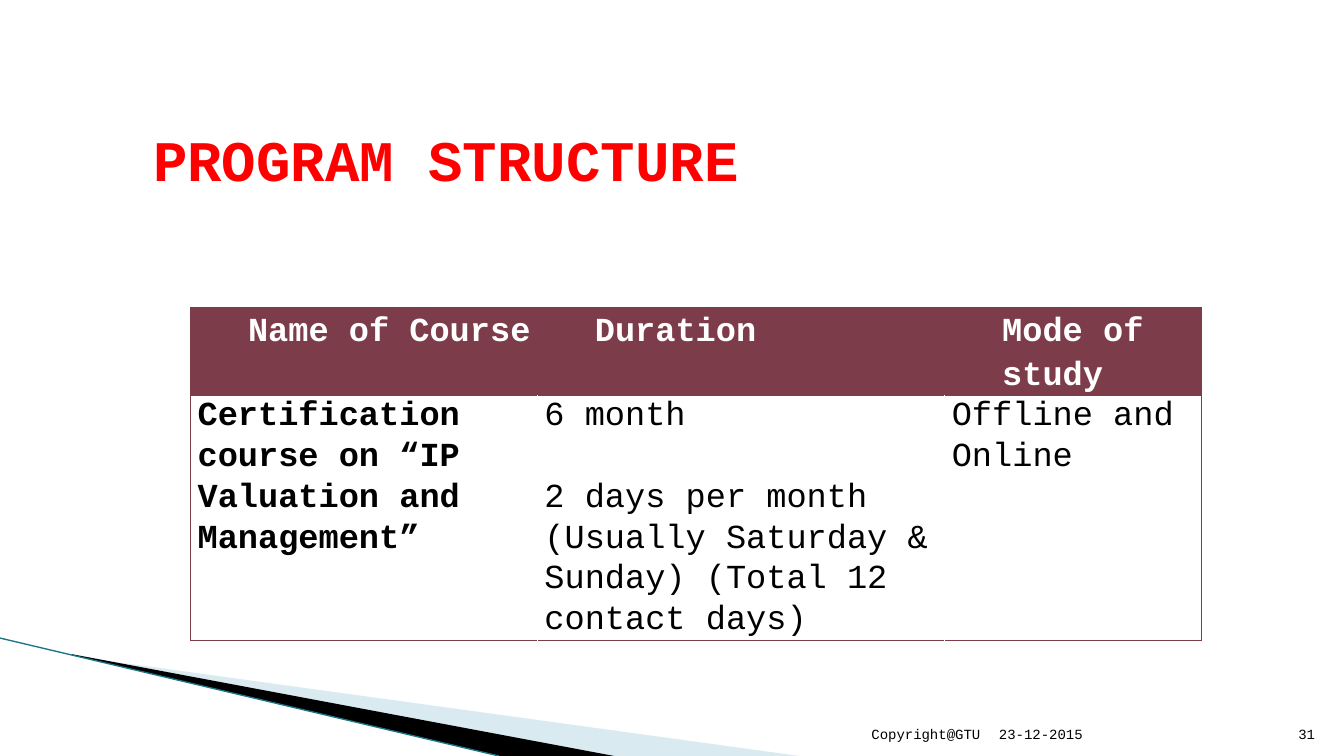
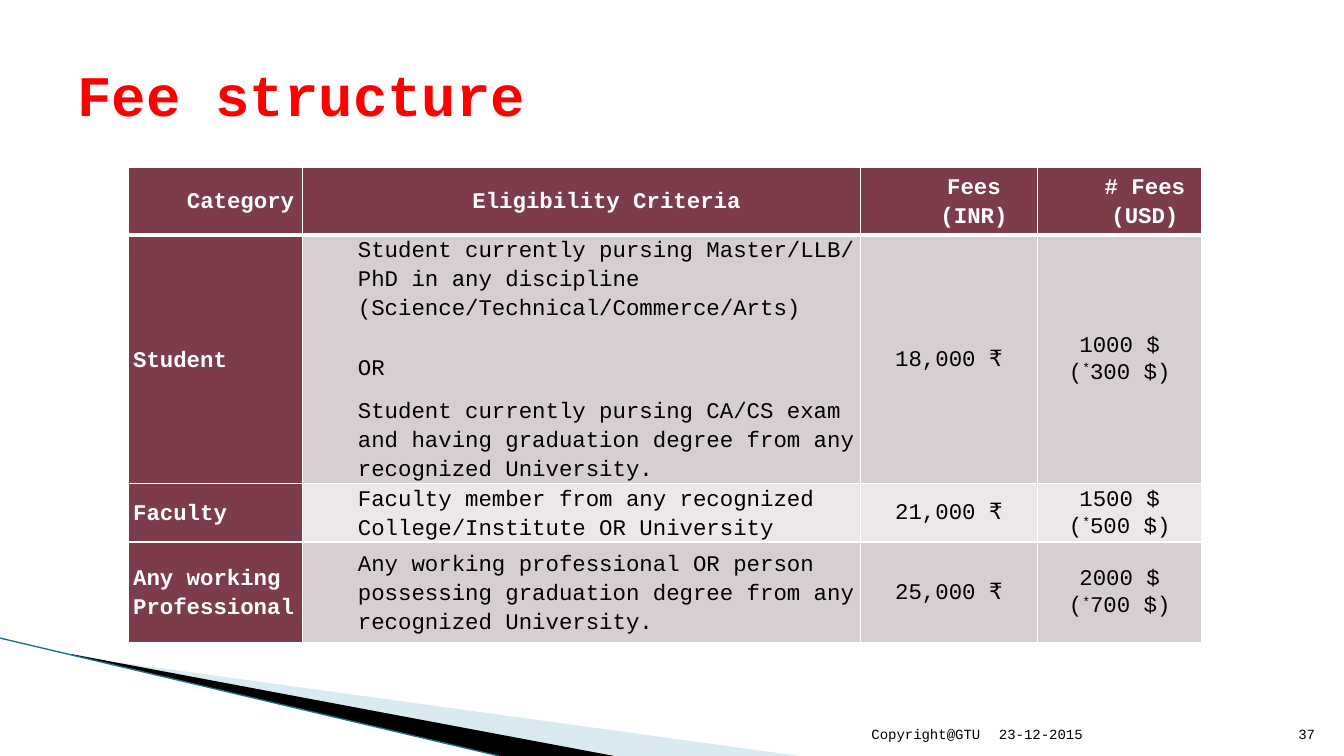
import pptx
import pptx.dml.color
import pptx.enum.shapes
import pptx.enum.text
import pptx.oxml
import pptx.oxml.ns
import pptx.util

WIDTH, HEIGHT = pptx.util.Inches(13.33), pptx.util.Inches(7.5)
FONT = "Courier New"
COLORS = {
    "title": "FF0000", "text": "000000", "white": "FFFFFF", "maroon": "7D3C4A",
    "band_dark": "D7CED0", "band_light": "ECE8E9",
    "swoosh": "A0CBDC", "swoosh_line": "1B7587",
}
ALIGN = pptx.enum.text.PP_ALIGN
ANCHOR = pptx.enum.text.MSO_ANCHOR
BODY_SPACING, WIDE_SPACING = 1.07, 1.15


# Lengths as percentages of the slide
def across(percent):
    return round(WIDTH * percent / 100)


def down(percent):
    return round(HEIGHT * percent / 100)


def rgb(name):
    return pptx.dml.color.RGBColor.from_string(COLORS[name])


def add_xml(parent, tag, **attributes):
    element = pptx.oxml.parse_xml(f"<{tag} {pptx.oxml.ns.nsdecls('a')}/>")
    for key, value in attributes.items():
        element.set(key, str(value))
    parent.append(element)
    return element


# Text
def style_paragraph(paragraph, size, color="text", bold=False, align=ALIGN.LEFT,
                    spacing=1.0, indent=0, before=0):
    paragraph.alignment = align
    paragraph.line_spacing = spacing
    if before:
        paragraph.space_before = pptx.util.Pt(before)
    if indent:
        properties = paragraph._p.get_or_add_pPr()
        properties.set("marL", str(pptx.util.Inches(indent)))
        properties.set("indent", "0")
    font = paragraph.font
    font.name, font.size, font.bold = FONT, pptx.util.Pt(size), bold
    font.color.rgb = rgb(color)


def add_text(slide, left, top, width, height, text, anchor, **style):
    box = slide.shapes.add_textbox(across(left), down(top), across(width), down(height))
    frame = box.text_frame
    frame.word_wrap = True
    frame.vertical_anchor = anchor
    frame.text = text
    style_paragraph(frame.paragraphs[0], **style)


def add_title(slide, left, top, width, height, text):
    add_text(slide, left, top, width, height, text, ANCHOR.MIDDLE,
             size=41, color="title", bold=True)


# Shared corner decoration and footer
def add_wedge(slide, points, color, opacity=100):
    corners = [(across(x), down(y)) for x, y in points]
    builder = slide.shapes.build_freeform(*corners[0], scale=1.0)
    builder.add_line_segments(corners[1:], close=True)
    shape = builder.convert_to_shape()
    shape.shadow.inherit = False
    shape.line.fill.background()
    shape.fill.solid()
    shape.fill.fore_color.rgb = rgb(color)
    if opacity < 100:
        fill_color = shape._element.spPr.find(".//" + pptx.oxml.ns.qn("a:srgbClr"))
        add_xml(fill_color, "a:alpha", val=opacity * 1000)


def add_decoration(slide):
    add_wedge(slide, [(5.48, 86.8), (59.49, 100), (45.61, 100), (5.48, 86.67)],
              "swoosh", opacity=40)
    add_wedge(slide, [(5.33, 86.53), (45.69, 100), (37.21, 100), (5.4, 86.67)], "text")
    line = slide.shapes.add_connector(pptx.enum.shapes.MSO_CONNECTOR.STRAIGHT,
                                      0, down(84.4), across(37.13), HEIGHT)
    line.line.color.rgb = rgb("swoosh_line")
    line.line.width = pptx.util.Pt(0.95)
    add_xml(line._element.spPr, "a:effectLst")


def add_footer(slide, number):
    for left, width, text, align in [
        (73.59, 21.01, "23-12-2015", ALIGN.LEFT),
        (47.94, 25.73, "Copyright@GTU", ALIGN.RIGHT),
        (94.6, 3.98, str(number), ALIGN.RIGHT),
    ]:
        add_text(slide, left, 93.47, width, 5.33, text, ANCHOR.BOTTOM, size=10, align=align)


# Tables
def add_table(slide, left, top, columns, rows):
    frame = slide.shapes.add_table(len(rows), len(columns), across(left), down(top),
                                   across(sum(columns)), down(sum(rows)))
    table = frame.table
    table.first_row = table.horz_banding = False
    for column, width in zip(table.columns, columns):
        column.width = across(width)
    for row, height in zip(table.rows, rows):
        row.height = down(height)
    return table


def set_borders(cell, color, widths):
    properties = cell._tc.get_or_add_tcPr()
    for position, (side, width) in enumerate(widths.items()):
        line = add_xml(properties, f"a:ln{side}", w=pptx.util.Pt(width))
        add_xml(add_xml(line, "a:solidFill"), "a:srgbClr", val=COLORS[color])
        properties.insert(position, line)


def fill_cell(cell, lines, margin, fill=None, anchor=ANCHOR.TOP, gaps=(), **style):
    """Write one paragraph per line; a line is a string or a list of (text, raised) runs."""
    cell.margin_left = cell.margin_right = pptx.util.Inches(margin)
    cell.margin_top = cell.margin_bottom = 0
    cell.vertical_anchor = anchor
    if fill:
        cell.fill.solid()
        cell.fill.fore_color.rgb = rgb(fill)
    else:
        cell.fill.background()
    frame = cell.text_frame
    for index, line in enumerate(lines):
        paragraph = frame.add_paragraph() if index else frame.paragraphs[0]
        before = gaps[index - 1] if index and gaps else 0
        style_paragraph(paragraph, before=before, **style)
        for text, raised in [(line, False)] if isinstance(line, str) else line:
            run = paragraph.add_run()
            run.text = text
            if raised:
                run._r.get_or_add_rPr().set("baseline", "30000")


def add_program_table(slide):
    headings = ["Name of Course", "Duration", "Mode of study"]
    details = [
        ["Certification course on “IP Valuation and Management”"],
        ["6 month", "2 days per month (Usually Saturday & Sunday) (Total 12 contact days)"],
        ["Offline and Online"],
    ]
    table = add_table(slide, 14.18, 40.67, [25.81, 30.31, 19.13], [11.6, 32.4])
    last = len(headings) - 1
    for column, (heading, lines) in enumerate(zip(headings, details)):
        header, body = table.cell(0, column), table.cell(1, column)
        fill_cell(header, [heading], 0.07, "maroon", size=24, color="white", bold=True,
                  spacing=WIDE_SPACING, indent=0.5)
        fill_cell(body, lines, 0.07, gaps=[29], size=24, bold=column == 0,
                  spacing=BODY_SPACING)
        set_borders(header, "maroon", dict.fromkeys("LRTB", 0.75))
        outer = {"L": column == 0, "R": column == last, "T": True, "B": True}
        set_borders(body, "maroon", {side: 0.75 for side, drawn in outer.items() if drawn})


def add_fee_table(slide):
    headings = ["Category", "Eligibility Criteria", "Fees (INR)", "# Fees (USD)"]
    categories = [
        ("Student",
         ["Student currently pursing Master/LLB/ PhD in any discipline "
          "(Science/Technical/Commerce/Arts)",
          "OR",
          "Student currently pursing CA/CS exam and having graduation degree from "
          "any recognized University."],
         "18,000 ₹", 1000, 300),
        ("Faculty", ["Faculty member from any recognized College/Institute OR University"],
         "21,000 ₹", 1500, 500),
        ("Any working Professional",
         ["Any working professional OR person possessing graduation degree from "
          "any recognized University."],
         "25,000 ₹", 2000, 700),
    ]
    table = add_table(slide, 9.53, 22.13, [12.98, 41.49, 13.2, 12.23],
                      [8.93, 32.93, 7.7, 13.33])
    common = {"margin": 0.05, "anchor": ANCHOR.MIDDLE, "size": 16}
    label = {**common, "fill": "maroon", "color": "white", "bold": True,
             "spacing": WIDE_SPACING}
    for column, heading in enumerate(headings):
        fill_cell(table.cell(0, column), [heading], align=ALIGN.CENTER, indent=0.5, **label)
    for row, (category, criteria, rupees, dollars, reduced) in enumerate(categories, 1):
        band = {**common, "fill": "band_dark" if row % 2 else "band_light"}
        fee = {**band, "align": ALIGN.CENTER, "spacing": BODY_SPACING}
        reduced_fee = [("(", False), ("*", True), (f"{reduced} $)", False)]
        fill_cell(table.cell(row, 0), [category], **label)
        fill_cell(table.cell(row, 1), criteria, gaps=[22, 10], indent=0.5,
                  spacing=WIDE_SPACING, **band)
        fill_cell(table.cell(row, 2), [rupees], **fee)
        fill_cell(table.cell(row, 3), [f"{dollars} $", reduced_fee], **fee)
    for row in range(len(table.rows)):
        for column in range(len(headings)):
            widths = {"L": 1, "R": 1, "T": 3 if row == 1 else 1, "B": 1 if row else 3}
            set_borders(table.cell(row, column), "white", widths)


def add_slide(presentation, number, title, title_place, add_content):
    slide = presentation.slides.add_slide(presentation.slide_layouts[6])
    add_decoration(slide)
    add_content(slide)
    add_title(slide, *title_place, title)
    add_footer(slide, number)


def main():
    presentation = pptx.Presentation()
    presentation.slide_width, presentation.slide_height = WIDTH, HEIGHT
    add_slide(presentation, 31, "PROGRAM STRUCTURE", (10.65, 14.27, 78.77, 13.33),
              add_program_table)
    add_slide(presentation, 37, "Fee structure", (5.03, 4, 90.02, 16.67), add_fee_table)
    presentation.save("out.pptx")


if __name__ == "__main__":
    main()
